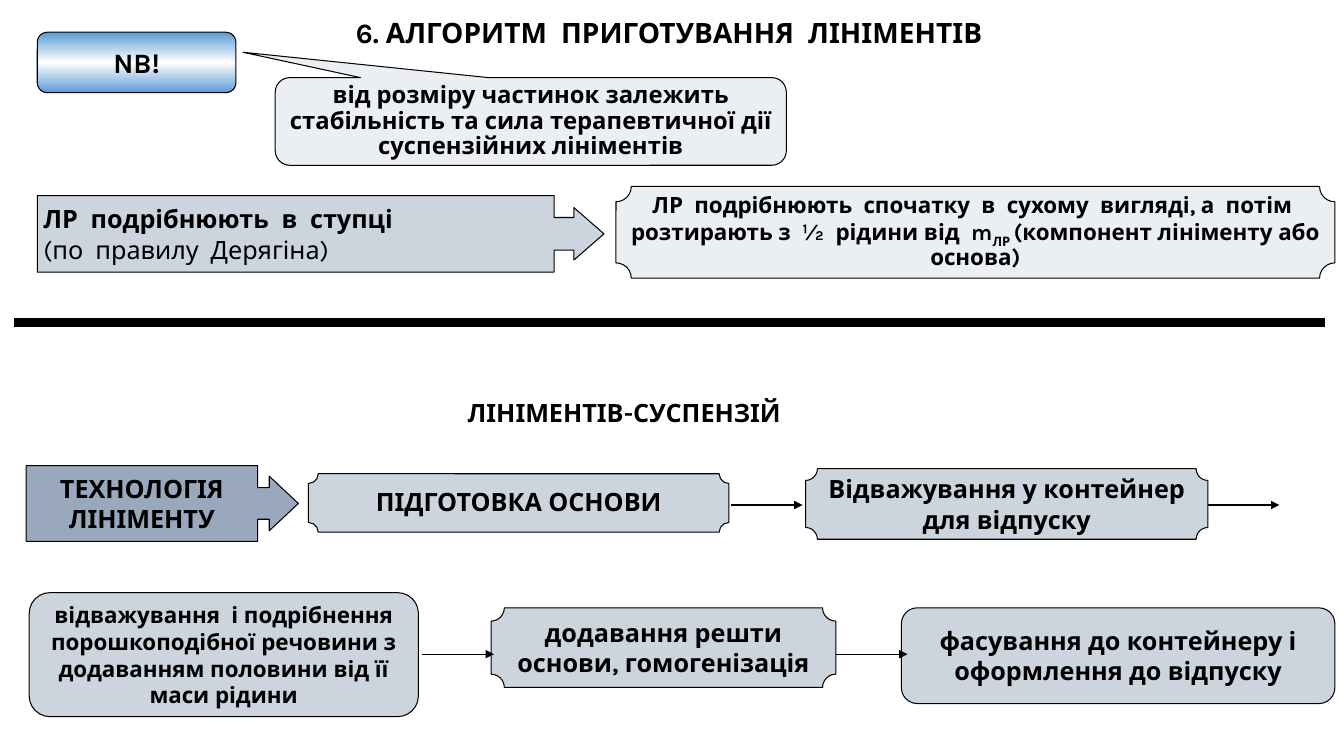
from copy import deepcopy

from lxml import etree
from pptx import Presentation
from pptx.dml.color import RGBColor
from pptx.enum.shapes import MSO_CONNECTOR, MSO_SHAPE
from pptx.enum.text import MSO_ANCHOR, MSO_AUTO_SIZE, PP_ALIGN
from pptx.oxml.ns import qn
from pptx.util import Emu, Pt

PX = 9144  # 100 px to the inch
FONT = "Karla"
COLORS = {
    "ink": "000000",
    "steel": "99A8BD",
    "mist": "CCD4DE",
    "pale": "EBEEF2",
    "blue": "5B9BD5",
    "white": "FFFFFF",
}
PLAQUE = MSO_SHAPE.PLAQUE
ROUND = MSO_SHAPE.ROUNDED_RECTANGLE
ARROW = MSO_SHAPE.RIGHT_ARROW_CALLOUT
BUBBLE = MSO_SHAPE.ROUNDED_RECTANGULAR_CALLOUT
LEFT, CENTER = PP_ALIGN.LEFT, PP_ALIGN.CENTER
MIDDLE = MSO_ANCHOR.MIDDLE
FIXED = MSO_AUTO_SIZE.NONE
STRAIGHT = MSO_CONNECTOR.STRAIGHT


def px(*nums):
    return [Emu(n * PX) for n in nums]


def color(name):
    return RGBColor.from_string(COLORS[name])


def add_run(para, text, size, bold=True, base=0):
    run = para.add_run()
    run.text = text
    font = run.font
    font.name, font.size, font.bold = FONT, Pt(size), bold
    font.color.rgb = color("ink")
    if base:
        run._r.get_or_add_rPr().set("baseline", str(base * 1000))


def set_frame(frame, align=CENTER, pad=(0, 0), lead=1.0):
    """Prepare a text frame and return its first paragraph."""
    frame.word_wrap = True
    frame.auto_size = FIXED
    frame.vertical_anchor = MIDDLE
    frame.margin_left, frame.margin_top = px(*pad)
    frame.margin_right, frame.margin_bottom = px(*pad)
    para = frame.paragraphs[0]
    para.alignment = align
    para.line_spacing = lead
    return para


def add_box(slide, kind, box, fill, adj, text="", size=18, **frame):
    shape = slide.shapes.add_shape(kind, *px(*box))
    shape.shadow.inherit = False
    for i, value in enumerate(adj):
        shape.adjustments[i] = value
    shape.fill.solid()
    shape.fill.fore_color.rgb = color(fill)
    shape.line.color.rgb = color("ink")
    shape.line.width = Pt(0.75)
    para = set_frame(shape.text_frame, **frame)
    if text:
        add_run(para, text, size)
    return shape


def add_line(slide, x, y, w, width=0.75, head=True):
    line = slide.shapes.add_connector(STRAIGHT, *px(x, y, x + w, y))
    line.line.color.rgb = color("ink")
    line.line.width = Pt(width)
    props = line._element.spPr
    if head:
        etree.SubElement(props.find(qn("a:ln")), qn("a:tailEnd"), type="triangle")
    etree.SubElement(props, qn("a:effectLst"))


def set_fade(shape):
    """Blue to white to blue, from top to bottom."""
    fill = shape.fill
    fill.gradient()
    fill.gradient_angle = 90
    stops = shape._element.spPr.find(".//" + qn("a:gsLst"))
    stops.append(deepcopy(stops[-1]))
    for stop, pos, name in zip(fill.gradient_stops, (0, 0.5, 1), ("blue", "white", "blue")):
        stop.position = pos
        stop.color.rgb = color(name)


def add_title(slide, x, y, w, h):
    title = slide.shapes.title
    title.left, title.top, title.width, title.height = px(x, y, w, h)
    para = set_frame(title.text_frame, pad=(10, 5))
    add_run(para, "6. АЛГОРИТМ  ПРИГОТУВАННЯ  ЛІНІМЕНТІВ", 20)


def add_note(slide, x, y, w, h):
    """NB badge with its speech bubble."""
    badge = add_box(slide, ROUND, (x, y, 197, 60), "blue", [0.167], "NB!", 20)
    set_fade(badge)
    left = x + 236
    add_box(slide, BUBBLE, (left, y + 45, x + w - left, h - 45), "pale",
            [-0.563, -0.789, 0.167],
            "від розміру частинок залежить стабільність та сила "
            "терапевтичної дії суспензійних лініментів",
            17, pad=(2, 1), lead=0.9)


def add_rule(slide, x, y, w, h):
    """Grinding rule: arrow box and its explanation."""
    step = add_box(slide, ARROW, (x, y + 9, 562, 76), "mist",
                   [0.425, 0.342, 0.392, 0.912], align=LEFT, pad=(6, 0))
    para = step.text_frame.paragraphs[0]
    add_run(para, "ЛР  подрібнюють  в  ступці", 18)
    para.add_line_break()
    add_run(para, "(по  правилу  Дерягіна)", 18, bold=False)

    left = x + 574
    how = add_box(slide, PLAQUE, (left, y, x + w - left, h), "pale", [0.167], lead=0.9)
    para = how.text_frame.paragraphs[0]
    add_run(para, "ЛР  подрібнюють  спочатку  в  сухому  вигляді, а  потім  "
                  "розтирають з  ½  рідини від  m", 16)
    add_run(para, "ЛР ", 16, base=-25)
    add_run(para, "(компонент лініменту або основа)", 16)


def add_head(slide, x, y, w, h):
    head = slide.shapes.add_textbox(*px(x, y, w, h))
    para = set_frame(head.text_frame, align=LEFT, pad=(10, 5))
    add_run(para, "ЛІНІМЕНТІВ-СУСПЕНЗІЙ", 18)


def add_base(slide, x, y, w, h):
    """First row of steps: making the base."""
    add_box(slide, ARROW, (x, y, 270, h), "steel",
            [0.417, 0.361, 0.385, 0.85], "ТЕХНОЛОГІЯ ЛІНІМЕНТУ")
    add_box(slide, PLAQUE, (x + 280, y + 8, 417, 58), "mist", [0.167],
            "ПІДГОТОВКА ОСНОВИ", lead=0.9)
    add_box(slide, PLAQUE, (x + 773, y + 3, 399, 70), "mist", [0.167],
            "Відважування у контейнер для відпуску")
    for left in (x + 699, x + w - 71):
        add_line(slide, left, y + 39, 71)


def add_mix(slide, x, y, w, h):
    """Second row of steps: grinding, mixing and packing."""
    add_box(slide, ROUND, (x, y, 386, h), "mist", [0.167],
            "відважування  і подрібнення порошкоподібної речовини з "
            "додаванням половини від її маси рідини", 16, pad=(2, 0))
    add_box(slide, PLAQUE, (x + 458, y + 15, 342, 79), "mist", [0.167],
            "додавання решти основи, гомогенізація")
    add_box(slide, ROUND, (x + w - 430, y + 15, 430, 95), "mist", [0.167],
            "фасування до контейнеру і оформлення до відпуску", pad=(2, 0))
    for left in (x + 390, x + 800):
        add_line(slide, left, y + 61, 71)


def main():
    deck = Presentation()
    deck.slide_width, deck.slide_height = px(1333, 750)
    slide = deck.slides.add_slide(deck.slide_layouts[5])  # title only
    add_title(slide, 25, 10, 1277, 44)
    add_note(slide, 37, 32, 743, 132)
    add_rule(slide, 37, 185, 1287, 91)
    add_line(slide, 14, 320, 1300, width=6, head=False)
    add_head(slide, 454, 389, 385, 40)
    add_base(slide, 26, 462, 1243, 75)
    add_mix(slide, 29, 588, 1295, 123)
    deck.save("out.pptx")


if __name__ == "__main__":
    main()
